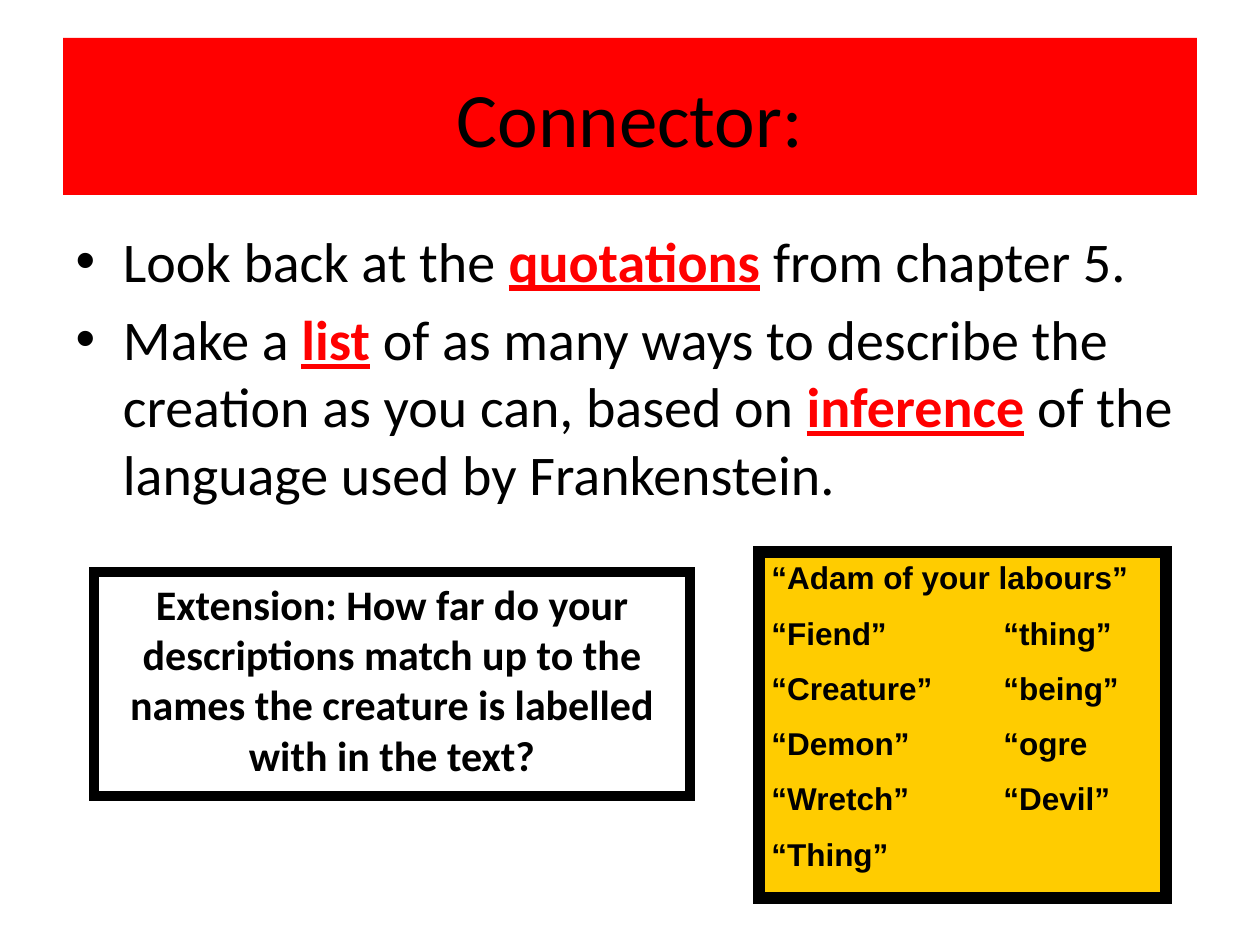
from lxml.etree import SubElement
from pptx import Presentation
from pptx.dml.color import RGBColor
from pptx.enum.shapes import MSO_SHAPE as Shape
from pptx.enum.text import MSO_ANCHOR as Anchor, MSO_AUTO_SIZE as AutoSize, PP_ALIGN as Align
from pptx.oxml.ns import qn
from pptx.util import Pt

SCALE = 914400 / 126
COLORS = {"red": "FF0000", "black": "000000", "gold": "FFCC00"}


def px(length):
    return round(length * SCALE)


def color(name):
    return RGBColor.from_string(COLORS[name])


class SlideBuilder:
    def __init__(self, slide):
        self.slide = slide

    def place(self, shape, bounds):
        shape.left, shape.top, shape.width, shape.height = map(px, bounds)

    def run(self, paragraph, text, size, font="Calibri", fill="black", bold=False, underline=False):
        run = paragraph.add_run()
        run.text = text
        run.font.name = font
        run.font.size = Pt(size)
        run.font.bold = bold
        run.font.underline = underline
        run.font.color.rgb = color(fill)

    def paragraphs(self, frame, count):
        frame.auto_size = AutoSize.NONE
        frame.word_wrap = True
        for _ in range(count - 1):
            frame.add_paragraph()
        return frame.paragraphs

    def title(self, text, bounds):
        title = self.slide.shapes.title
        self.place(title, bounds)
        title.fill.solid()
        title.fill.fore_color.rgb = color("red")
        paragraph = self.paragraphs(title.text_frame, 1)[0]
        paragraph.alignment = Align.CENTER
        self.run(paragraph, text, 44)

    def bullets(self, items, bounds):
        body = self.slide.placeholders[1]
        self.place(body, bounds)
        for paragraph, parts in zip(self.paragraphs(body.text_frame, len(items)), items):
            for index, text in enumerate(parts):
                key_word = index % 2 == 1
                self.run(paragraph, text, 32, fill="red" if key_word else "black",
                         bold=key_word, underline=key_word)

    def box(self, lines, bounds, border, size, font="Calibri", fill=None,
            align=Align.LEFT, space=0, tab=None):
        box = self.slide.shapes.add_shape(Shape.RECTANGLE, *map(px, bounds))
        box.shadow.inherit = False
        if fill:
            box.fill.solid()
            box.fill.fore_color.rgb = color(fill)
        else:
            box.fill.background()
        box.line.color.rgb = color("black")
        box.line.width = Pt(border)
        SubElement(box.line._get_or_add_ln(), qn("a:miter"), lim="800000")
        box.text_frame.vertical_anchor = Anchor.TOP
        for paragraph, text in zip(self.paragraphs(box.text_frame, len(lines)), lines):
            paragraph.alignment = align
            paragraph.space_before = Pt(space)
            if tab:
                tabs = SubElement(paragraph._p.get_or_add_pPr(), qn("a:tabLst"))
                SubElement(tabs, qn("a:tab"), pos=str(px(tab)), algn="l")
            self.run(paragraph, text, size, font, bold=True)


def main():
    presentation = Presentation()
    presentation.slide_width = px(1260)
    presentation.slide_height = px(945)
    slide = presentation.slides.add_slide(presentation.slide_layouts[1])
    builder = SlideBuilder(slide)

    builder.title("Connector:", (63, 38, 1134, 157))
    builder.bullets([
        ["Look back at the ", "quotations", " from chapter 5."],
        ["Make a ", "list", " of as many ways to describe the creation as you can, based on ",
         "inference", " of the language used by Frankenstein."],
    ], (63, 220, 1134, 311))
    builder.box(
        ["Extension: How far do your descriptions match up to the names "
         "the creature is labelled with in the text?"],
        (94, 572, 596, 224), 6, 24, align=Align.CENTER)
    builder.box(
        ["“Adam of your labours”", "“Fiend”\t“thing”", "“Creature”\t“being”",
         "“Demon”\t“ogre", "“Wretch”\t“Devil”", "“Thing”"],
        (759, 552, 407, 346), 6.5, 18, font="Arial", fill="gold", space=10, tab=232)

    presentation.save("out.pptx")


if __name__ == "__main__":
    main()
